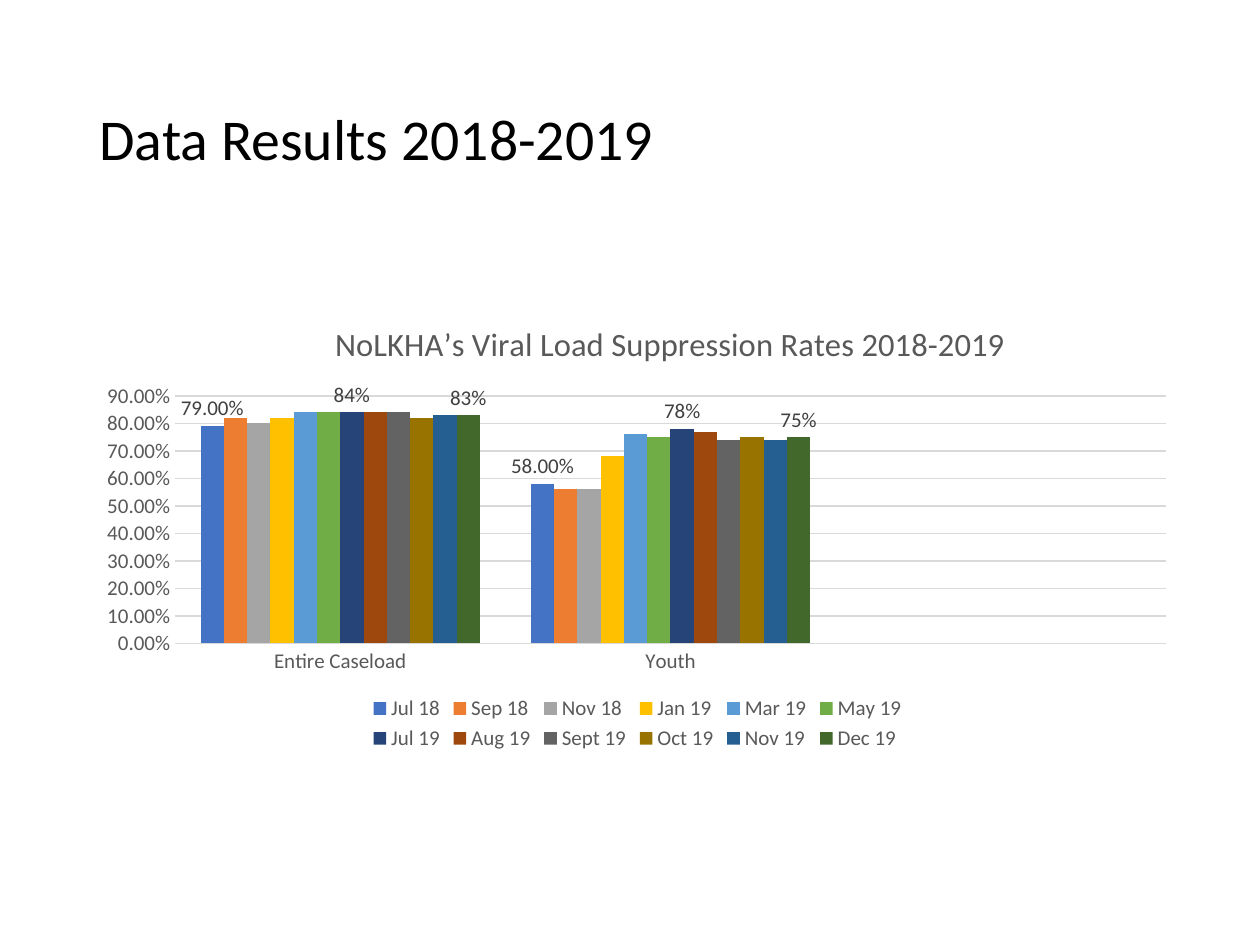
import pptx
import pptx.chart.data
import pptx.dml.color
import pptx.enum.chart
import pptx.enum.text
import pptx.oxml
import pptx.oxml.ns
import pptx.util

RGB = pptx.dml.color.RGBColor
BLACK = RGB(0x00, 0x00, 0x00)
GREY = RGB(0x59, 0x59, 0x59)
DARK_GREY = RGB(0x40, 0x40, 0x40)
RULE = RGB(0xD9, 0xD9, 0xD9)
qn = pptx.oxml.ns.qn

CATEGORIES = ["Entire Caseload", "Youth", ""]  # the last slot stays empty
# month, entire caseload, youth, bar colour, label format
SERIES = [
    ("Jul 18", 0.79, 0.58, RGB(0x44, 0x72, 0xC4), "0.00%"),
    ("Sep 18", 0.82, 0.56, RGB(0xED, 0x7D, 0x31), None),
    ("Nov 18", 0.80, 0.56, RGB(0xA5, 0xA5, 0xA5), None),
    ("Jan 19", 0.82, 0.68, RGB(0xFF, 0xC0, 0x00), None),
    ("Mar 19", 0.84, 0.76, RGB(0x5B, 0x9B, 0xD5), None),
    ("May 19", 0.84, 0.75, RGB(0x70, 0xAD, 0x47), None),
    ("Jul 19", 0.84, 0.78, RGB(0x26, 0x44, 0x78), "0%"),
    ("Aug 19", 0.84, 0.77, RGB(0x9E, 0x48, 0x0E), None),
    ("Sept 19", 0.84, 0.74, RGB(0x63, 0x63, 0x63), None),
    ("Oct 19", 0.82, 0.75, RGB(0x99, 0x73, 0x00), None),
    ("Nov 19", 0.83, 0.74, RGB(0x25, 0x5E, 0x91), None),
    ("Dec 19", 0.83, 0.75, RGB(0x43, 0x68, 0x2B), "0%"),
]


class Deck:
    FONT = "Calibri"
    PX = 914400 / 126

    def __init__(self, width, height):
        self.prs = pptx.Presentation()
        self.prs.slide_width = self.emu(width)
        self.prs.slide_height = self.emu(height)
        self.s = self.prs.slides.add_slide(self.prs.slide_layouts[6])

    def emu(self, px):
        return pptx.util.Emu(round(px * self.PX))

    def box(self, *px):
        return [self.emu(v) for v in px]

    def style(self, font, size, color):
        formats = {"name": self.FONT, "size": pptx.util.Pt(size), "bold": False}
        for name, value in formats.items():
            setattr(font, name, value)
        font.color.rgb = color

    def place(self, parent, after, **fractions):
        """Give a chart part a fixed place, in fractions of the chart."""
        for old in parent.findall(qn("c:layout")):
            parent.remove(old)
        target = '<c:layoutTarget val="inner"/>' if "w" in fractions else ""
        modes = "".join(f'<c:{k}Mode val="edge"/>' for k in "xy")
        sizes = "".join(f'<c:{k} val="{v}"/>' for k, v in fractions.items())
        parent.insert(after, pptx.oxml.parse_xml(
            f'<c:layout {pptx.oxml.ns.nsdecls("c")}><c:manualLayout>'
            f"{target}{modes}{sizes}</c:manualLayout></c:layout>"))

    def text(self, text, box, size, color):
        tf = self.s.shapes.add_textbox(*self.box(*box)).text_frame
        formats = {"word_wrap": True,
                   "vertical_anchor": pptx.enum.text.MSO_ANCHOR.MIDDLE}
        for name, value in formats.items():
            setattr(tf, name, value)
        p = tf.paragraphs[0]
        p.line_spacing = 0.9
        r = p.add_run()
        r.text = text
        self.style(r.font, size, color)

    def column_chart(self, title, box):
        data = pptx.chart.data.CategoryChartData(number_format="0.00%")
        data.categories = CATEGORIES
        for name, caseload, youth, _, _ in SERIES:
            data.add_series(name, (caseload, youth, None))
        kind = pptx.enum.chart.XL_CHART_TYPE.COLUMN_CLUSTERED
        chart = self.s.shapes.add_chart(kind, *self.box(*box), data).chart
        self.style(chart.font, 10, BLACK)

        # Title
        chart.has_title = True
        p = chart.chart_title.text_frame.paragraphs[0]
        r = p.add_run()
        r.text = title
        self.style(r.font, 18.6, GREY)
        self.place(chart.chart_title._element, 1, x=0.22, y=0.02)

        # Legend
        chart.has_legend = True
        chart.legend.position = pptx.enum.chart.XL_LEGEND_POSITION.BOTTOM
        chart.legend.include_in_layout = False
        self.style(chart.legend.font, 12, GREY)

        # Axes
        for axis in (chart.category_axis, chart.value_axis):
            axis.major_tick_mark = pptx.enum.chart.XL_TICK_MARK.NONE
            axis.minor_tick_mark = pptx.enum.chart.XL_TICK_MARK.NONE
            self.style(axis.tick_labels.font, 12, GREY)
        axis.maximum_scale, axis.minimum_scale, axis.major_unit = 0.9, 0, 0.1
        axis.tick_labels.number_format = "0.00%"
        axis.tick_labels.number_format_is_linked = False
        axis.format.line.fill.background()
        for line in (chart.category_axis.format.line,
                     axis.major_gridlines.format.line):
            line.color.rgb = RULE
            line.width = pptx.util.Pt(0.75)

        # Bars and their labels
        plot = chart.plots[0]
        formats = {"gap_width": 219, "overlap": 0, "vary_by_categories": False}
        for name, value in formats.items():
            setattr(plot, name, value)
        for series, (_, _, _, color, number_format) in zip(plot.series, SERIES):
            series.format.fill.solid()
            series.format.fill.fore_color.rgb = color
            if number_format:
                self.labels(series.data_labels, number_format)
        plot_area = chart._chartSpace.find(".//" + qn("c:plotArea"))
        self.place(plot_area, 0, x=0.08, y=0.2, w=0.9, h=0.55)

    def labels(self, labels, number_format):
        formats = {"show_value": True, "number_format": number_format,
                   "number_format_is_linked": False,
                   "position": pptx.enum.chart.XL_LABEL_POSITION.OUTSIDE_END}
        for name, value in formats.items():
            setattr(labels, name, value)
        self.style(labels.font, 12, DARK_GREY)


def main():
    deck = Deck(1260, 945)
    # Heading
    deck.text("Data Results 2018-2019", (87, 50, 1086, 183), 33, BLACK)
    # Suppression rates by month
    deck.column_chart("NoLKHA’s Viral Load Suppression Rates 2018-2019",
                      (87, 306, 1101, 450))
    deck.prs.save("out.pptx")


if __name__ == "__main__":
    main()
